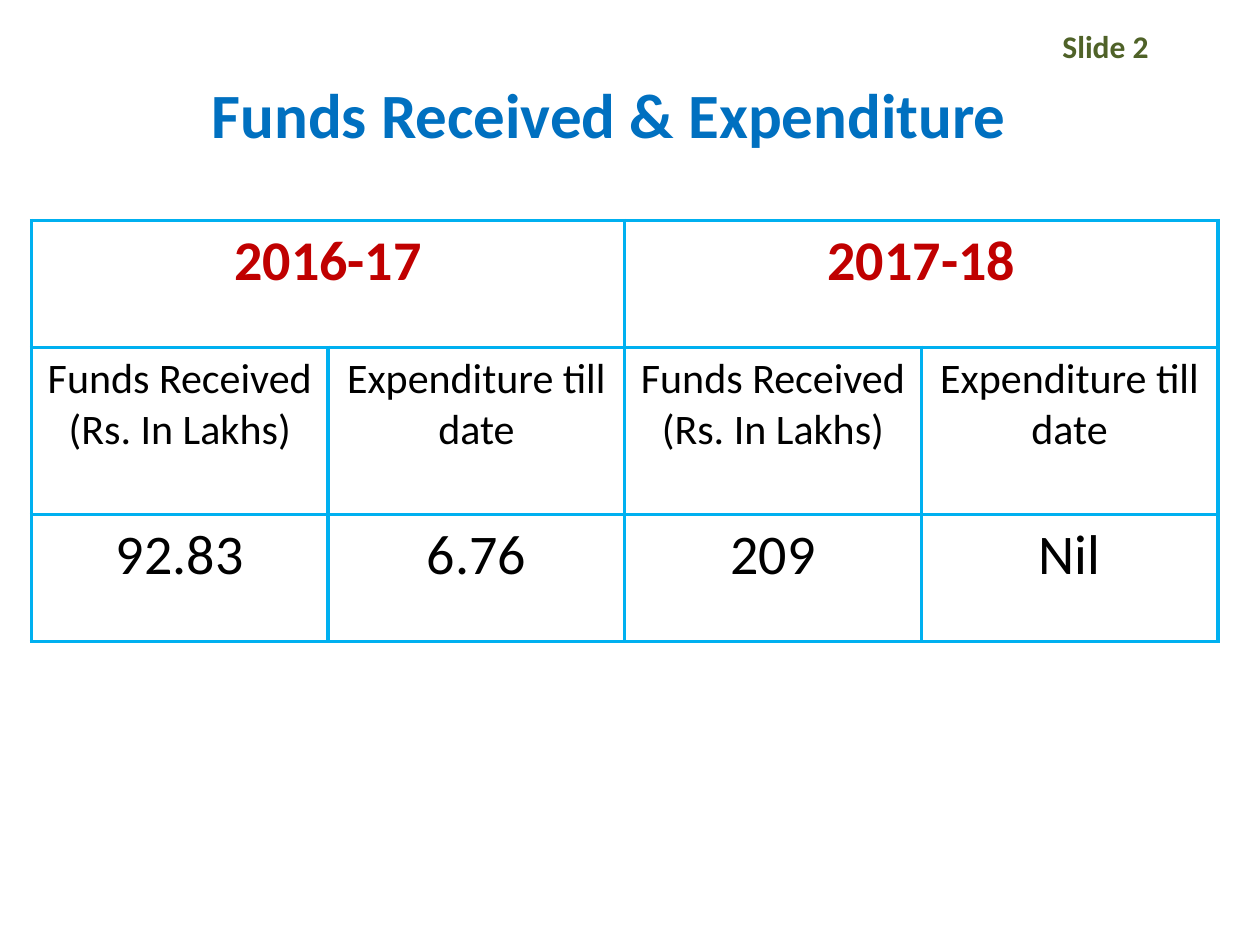
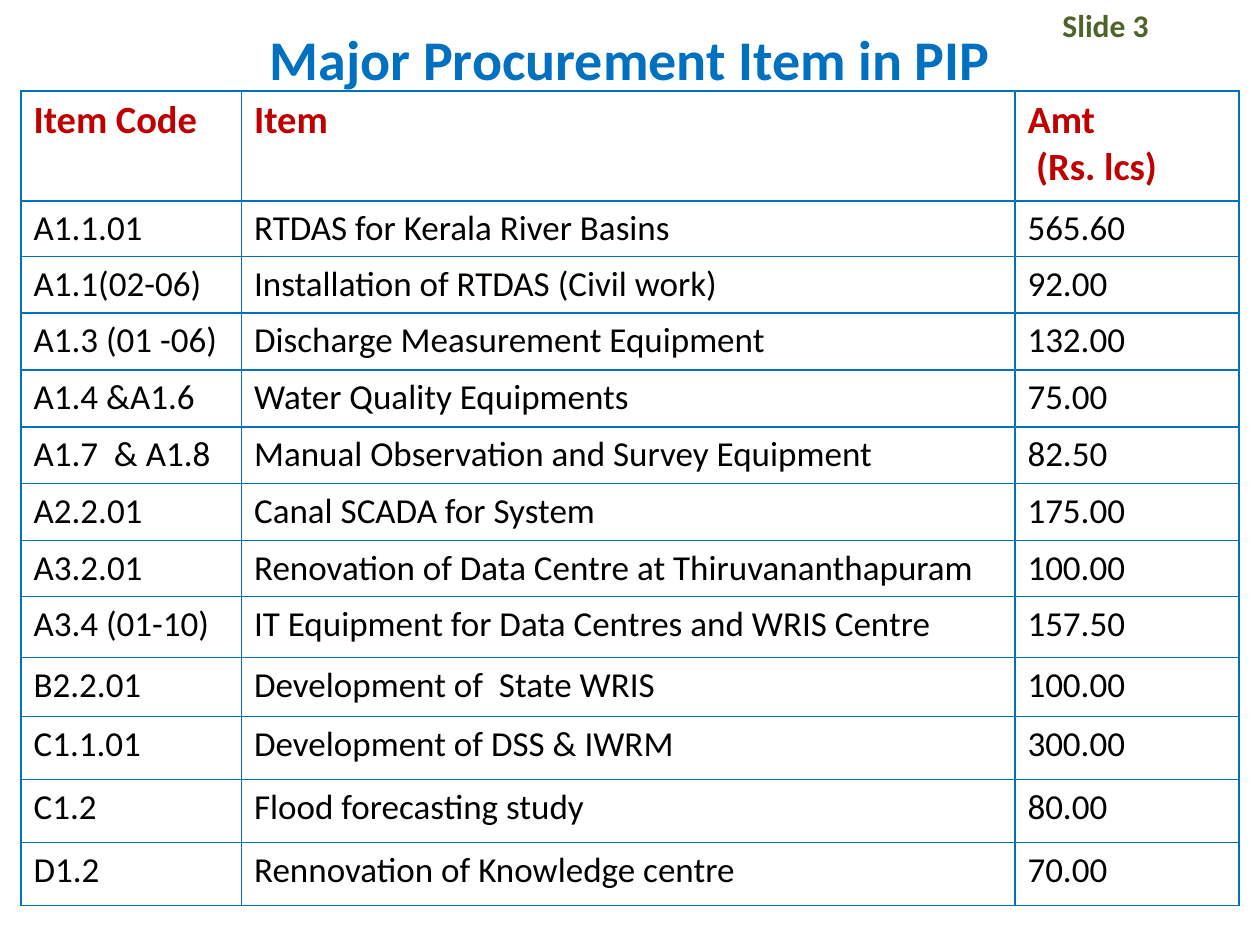
from lxml import etree
from pptx import Presentation
from pptx.dml.color import RGBColor
from pptx.enum.text import MSO_ANCHOR, MSO_AUTO_SIZE, PP_ALIGN
from pptx.oxml.ns import qn
from pptx.util import Pt

LEFT, CENTER = PP_ALIGN.LEFT, PP_ALIGN.CENTER
MIDDLE = MSO_ANCHOR.MIDDLE
NO_FIT, GROW = MSO_AUTO_SIZE.NONE, MSO_AUTO_SIZE.SHAPE_TO_FIT_TEXT
TITLE_ONLY = 5
FONT = "Calibri"
COLORS = {
    "title": "0070C0",
    "head": "C00000",
    "text": "000000",
    "label": "4F6228",
    "sky": "00B0F0",
    "paper": "FFFFFF",
}


class Deck:
    def __init__(self):
        self.prs = Presentation()
        self.prs.slide_width, self.prs.slide_height = Pt(720), Pt(540)
        self.slide = None

    def add_text(self, frame, text, size, color, bold=False, align=LEFT):
        """Fill a text frame, one paragraph for each line of the text."""
        for i, line in enumerate(text.split("\n")):
            para = frame.add_paragraph() if i else frame.paragraphs[0]
            para.alignment = align
            run = para.add_run()
            run.text = line
            run.font.name, run.font.size, run.font.bold = FONT, Pt(size), bold
            run.font.color.rgb = RGBColor.from_string(COLORS[color])

    def place(self, shape, box):
        shape.left, shape.top, shape.width, shape.height = map(Pt, box)

    def start(self, title, box, size, label_top):
        """Add a slide with its title and its label at the top right."""
        layout = self.prs.slide_layouts[TITLE_ONLY]
        self.slide = self.prs.slides.add_slide(layout)
        head = self.slide.shapes.title
        self.place(head, box)
        frame = head.text_frame
        frame.auto_size, frame.vertical_anchor = NO_FIT, MIDDLE
        self.add_text(frame, title, size, "title", True, CENTER)

        number = len(self.prs.slides) + 1
        label = self.slide.shapes.add_textbox(Pt(600), Pt(label_top), Pt(120), Pt(29))
        label.text_frame.word_wrap = True
        label.text_frame.auto_size = GROW
        self.add_text(label.text_frame, f"Slide {number}", 18, "label", True)

    def border(self, cell, color, width):
        props = cell._tc.get_or_add_tcPr()
        for i, side in enumerate(("a:lnL", "a:lnR", "a:lnT", "a:lnB")):
            line = etree.Element(qn(side), w=str(Pt(width)))
            fill = etree.SubElement(line, qn("a:solidFill"))
            etree.SubElement(fill, qn("a:srgbClr"), val=COLORS[color])
            props.insert(i, line)

    def table(self, left, top, cols, rows, data, sizes, edge, align=LEFT):
        """Add a table; a None in the data joins the cell to its left one."""
        frame = self.slide.shapes.add_table(
            len(rows), len(cols), Pt(left), Pt(top), Pt(sum(cols)), Pt(sum(rows)))
        grid = frame.table
        grid.first_row = grid.horz_banding = False
        for col, width in zip(grid.columns, cols):
            col.width = Pt(width)
        for row, height in zip(grid.rows, rows):
            row.height = Pt(height)
        for r, (line, size) in enumerate(zip(data, sizes)):
            head = r == 0
            for c, text in enumerate(line):
                cell = grid.cell(r, c)
                cell.fill.solid()
                cell.fill.fore_color.rgb = RGBColor.from_string(COLORS["paper"])
                self.border(cell, *edge)
                if text is None:
                    grid.cell(r, c - 1).merge(cell)
                else:
                    self.add_text(cell.text_frame, text, size,
                                  "head" if head else "text", head, align)


FUNDS = [
    ["2016-17", None, "2017-18", None],
    ["Funds Received\n(Rs. In Lakhs)", "Expenditure till date"] * 2,
    ["92.83", "6.76", "209", "Nil"],
]
ITEMS = [
    ["Item Code", "Item", "Amt\n (Rs. lcs)"],
    ["A1.1.01", "RTDAS for Kerala River Basins", "565.60"],
    ["A1.1(02-06)", "Installation of RTDAS (Civil work)", "92.00"],
    ["A1.3 (01 -06)", "Discharge Measurement Equipment", "132.00"],
    ["A1.4 &A1.6", "Water Quality Equipments", "75.00"],
    ["A1.7  & A1.8", "Manual Observation and Survey Equipment", "82.50"],
    ["A2.2.01", "Canal SCADA for System", "175.00"],
    ["A3.2.01", "Renovation of Data Centre at Thiruvananthapuram", "100.00"],
    ["A3.4 (01-10)", "IT Equipment for Data Centres and WRIS Centre", "157.50"],
    ["B2.2.01", "Development of  State WRIS", "100.00"],
    ["C1.1.01", "Development of DSS & IWRM", "300.00"],
    ["C1.2", "Flood forecasting study", "80.00"],
    ["D1.2", "Rennovation of Knowledge centre", "70.00"],
]


def main():
    deck = Deck()

    # Funds and expenditure by year
    deck.start("Funds Received & Expenditure", (96, 42, 504, 45), 36, 12)
    deck.table(18, 126, [169.5] * 4, [72.5, 95.5, 72.5], FUNDS,
               [32, 24, 32], ("sky", 2.25), CENTER)

    # Procurement items
    deck.start("Major Procurement Item in PIP", (36, 18, 648, 30), 32, 0)
    heights = [63, 31.5] + [32.5] * 5 + [32, 35, 33.5] + [36] * 3
    deck.table(12, 52, [126, 442, 128], heights, ITEMS,
               [22] + [20] * 12, ("title", 1))

    deck.prs.save("out.pptx")


if __name__ == "__main__":
    main()
